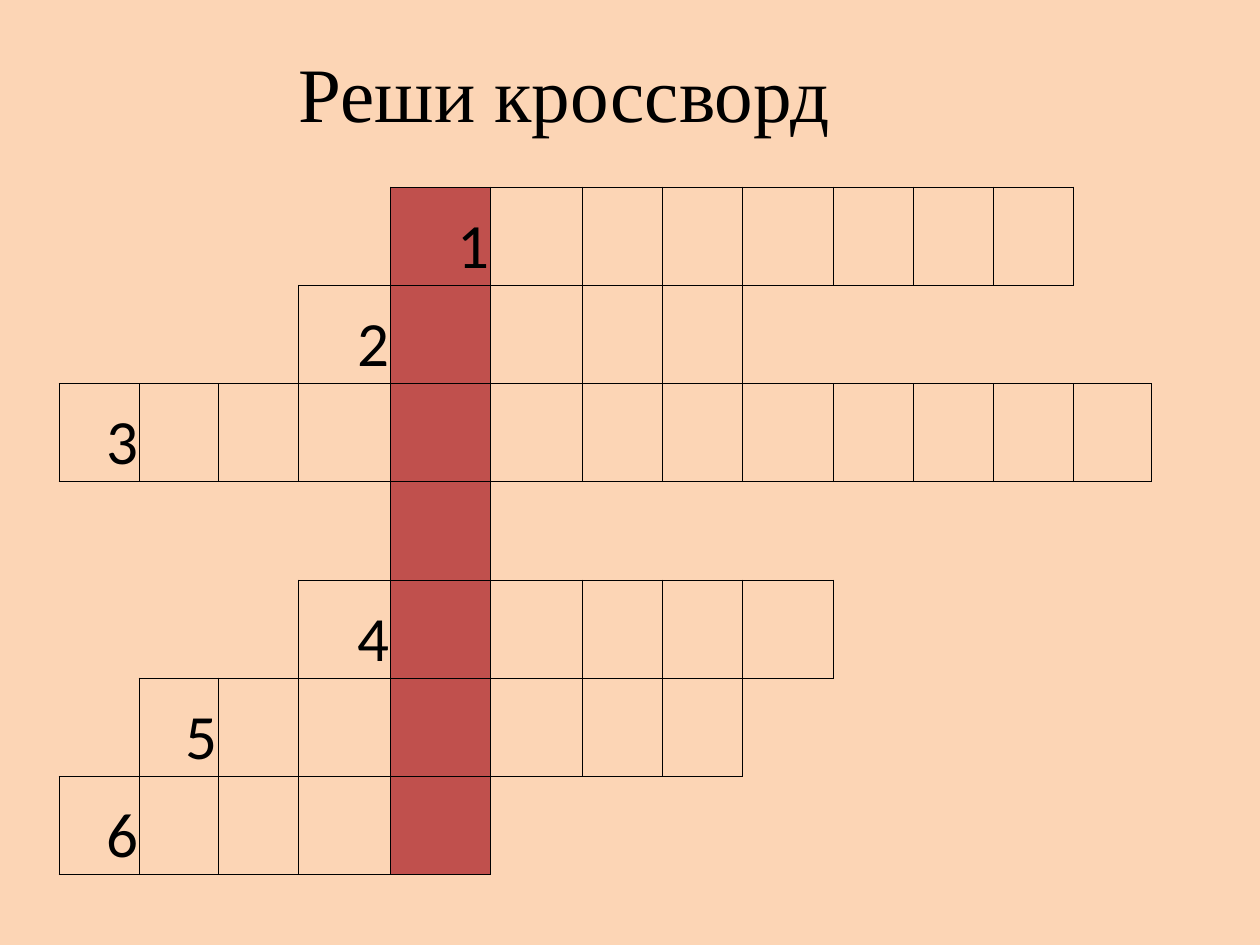
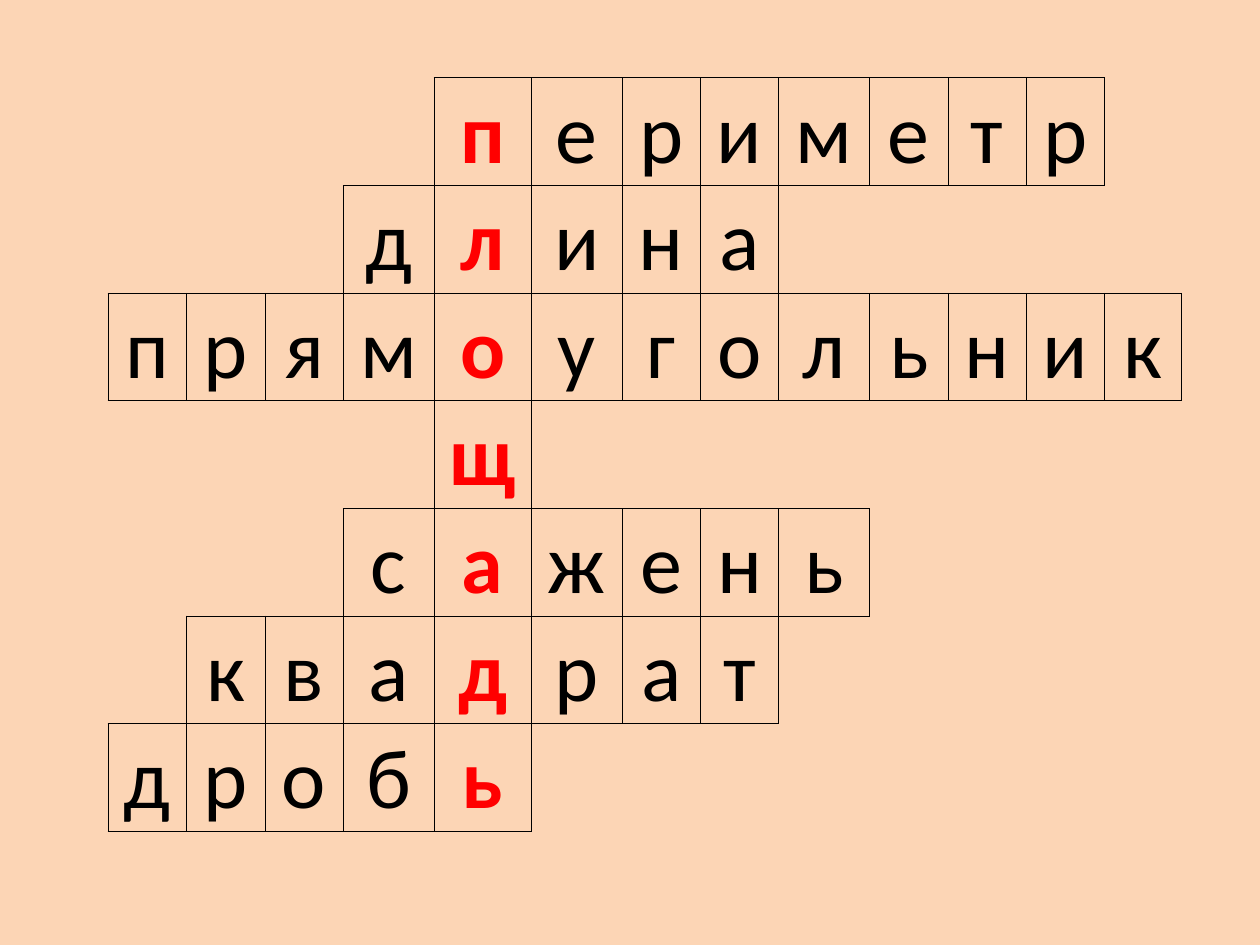
import pptx
import pptx.dml.color
import pptx.enum.text
import pptx.util
from lxml import etree
from pptx.oxml.ns import qn

Cm = pptx.util.Cm
Pt = pptx.util.Pt
RGBColor = pptx.dml.color.RGBColor
Align = pptx.enum.text.PP_ALIGN
Anchor = pptx.enum.text.MSO_ANCHOR

PEACH = RGBColor(0xFC, 0xD5, 0xB5)
BRICK = RGBColor(0xC0, 0x50, 0x4D)
RED = RGBColor(0xFF, 0, 0)
BLACK = RGBColor(0, 0, 0)

KEY_COLUMN = 4
COLUMN_COUNT = 13
WORDS = [
    (4, "периметр"),
    (3, "длина"),
    (0, "прямоугольник"),
    (4, "щ"),
    (3, "сажень"),
    (1, "квадрат"),
    (0, "дробь"),
]
LETTERS = {
    (row, start + offset): letter
    for row, (start, word) in enumerate(WORDS)
    for offset, letter in enumerate(word)
}
numbered = [(row, start) for row, (start, word) in enumerate(WORDS) if len(word) > 1]
NUMBERS = {place: str(number) for number, place in enumerate(numbered, 1)}
EDGES = {"a:lnL": (0, -1), "a:lnR": (0, 1), "a:lnT": (-1, 0), "a:lnB": (1, 0)}


def draw_borders(cell, row, column):
    properties = cell._tc.get_or_add_tcPr()
    for tag, (down, right) in EDGES.items():
        line = etree.SubElement(properties, qn(tag), w=str(Pt(0.5)))
        if (row, column) in LETTERS or (row + down, column + right) in LETTERS:
            fill = etree.SubElement(line, qn("a:solidFill"))
            etree.SubElement(fill, qn("a:srgbClr"), val=str(BLACK))
        else:
            etree.SubElement(line, qn("a:noFill"))


def add_crossword(page, left, top, widths, row_height, texts, size, align, key_fill, key_color):
    narrow, medium, wide, last = widths
    columns = [narrow] * COLUMN_COUNT
    columns[3] = columns[5] = columns[8] = medium
    columns[KEY_COLUMN] = wide
    columns[-1] = last
    table = page.shapes.add_table(
        len(WORDS), COLUMN_COUNT, Cm(left), Cm(top),
        Cm(sum(columns)), Cm(row_height * len(WORDS))).table
    table.first_row = False
    table.horz_banding = False
    for column, width in enumerate(columns):
        table.columns[column].width = Cm(width)
    for row in range(len(WORDS)):
        table.rows[row].height = Cm(row_height)
        for column in range(COLUMN_COUNT):
            cell = table.cell(row, column)
            is_key = column == KEY_COLUMN
            draw_borders(cell, row, column)
            if is_key and key_fill:
                cell.fill.solid()
                cell.fill.fore_color.rgb = key_fill
            else:
                cell.fill.background()
            cell.margin_left = cell.margin_right = cell.margin_top = Cm(0.02)
            cell.margin_bottom = 0
            cell.vertical_anchor = Anchor.BOTTOM
            cell.text = texts.get((row, column), "")
            para = cell.text_frame.paragraphs[0]
            para.alignment = align
            para.font.name = "Calibri"
            para.font.size = Pt(size)
            para.font.bold = is_key and key_color != BLACK
            para.font.color.rgb = key_color if is_key else BLACK


deck = pptx.Presentation()
deck.slide_width = Cm(25.4)
deck.slide_height = Cm(19.05)
background = deck.slide_master.background.fill
background.solid()
background.fore_color.rgb = PEACH

page = deck.slides.add_slide(deck.slide_layouts[5])
title = page.shapes.title
title.left, title.top, title.width, title.height = Cm(5.77), Cm(0.79), Cm(12.7), Cm(2.13)
title.text = "Реши кроссворд"
title.text_frame.auto_size = pptx.enum.text.MSO_AUTO_SIZE.NONE
title.text_frame.vertical_anchor = Anchor.TOP
para = title.text_frame.paragraphs[0]
para.alignment = Align.LEFT
para.font.name = "Times New Roman"
para.font.size = Pt(44)
para.font.color.rgb = BLACK
add_crossword(page, 1.19, 3.77, (1.61, 1.85, 2.02, 1.57), 1.98,
              NUMBERS, 36, Align.RIGHT, BRICK, BLACK)

page = deck.slides.add_slide(deck.slide_layouts[6])
add_crossword(page, 2.18, 1.57, (1.58, 1.83, 1.96, 1.55), 2.17,
              LETTERS, 48, Align.CENTER, None, RED)

deck.save("out.pptx")
